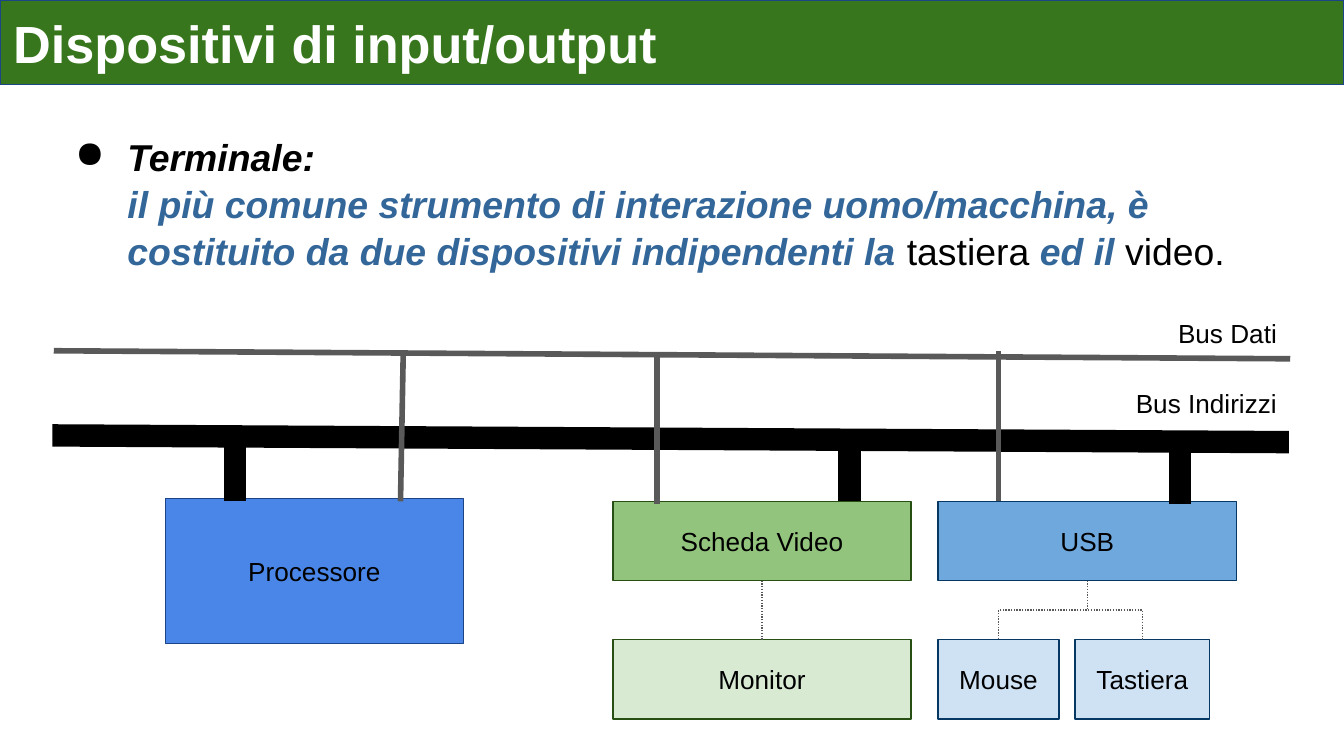
"""Build the slide on input/output devices, on a grid of tenths of an inch."""
from lxml.etree import SubElement
from pptx import Presentation
from pptx.dml.color import RGBColor
from pptx.enum.dml import MSO_LINE as Dash
from pptx.enum.shapes import MSO_CONNECTOR as Connector, MSO_SHAPE as Shape
from pptx.enum.text import MSO_ANCHOR as Anchor, PP_ALIGN as Align
from pptx.oxml.ns import qn
from pptx.util import Inches, Pt

CELL = Inches(0.1)
COLUMNS, ROWS = 100, 56.25
BLACK, GRAY, BLUE = "000000", "595959", "336699"
BOX_WIDTH, BOX_HEIGHT = 22.2, 5.9
CARD_TOP, DEVICE_TOP = 37.3, 47.6
VIDEO_LEFT, USB_LEFT = 45.6, 69.8


def color(value):
    return RGBColor.from_string(value)


def write(shape, *runs, size=14, align=Align.LEFT, anchor=Anchor.MIDDLE, inset=1, spacing=1, bullet=None):
    frame = shape.text_frame
    frame.word_wrap = True
    frame.vertical_anchor = anchor
    frame.margin_left = frame.margin_right = CELL
    frame.margin_top = frame.margin_bottom = int(inset * CELL)
    paragraph = frame.paragraphs[0]
    paragraph.alignment = align
    paragraph.line_spacing = spacing
    if bullet:
        properties = paragraph._p.get_or_add_pPr()
        properties.set("marL", str(5 * CELL))
        properties.set("indent", str(int(-3.9 * CELL)))
        bullet_color = SubElement(properties, qn("a:buClr"))
        SubElement(bullet_color, qn("a:srgbClr"), val=BLACK)
        SubElement(properties, qn("a:buChar"), char=bullet)
    paragraph.font.size = Pt(size)
    for text, tint, bold, italic in runs:
        if text.startswith("\n"):
            paragraph.add_line_break()
        run = paragraph.add_run()
        run.text = text.lstrip("\n")
        run.font.name, run.font.size = "Arial", Pt(size)
        run.font.bold, run.font.italic = bold, italic
        run.font.color.rgb = color(tint)


presentation = Presentation()
presentation.slide_width = COLUMNS * CELL
presentation.slide_height = int(ROWS * CELL)
slide = presentation.slides.add_slide(presentation.slide_layouts[6])
shapes = slide.shapes

definition = shapes.add_textbox(*(int(n * CELL) for n in (3.5, 9.3, 93.2, 13.7)))
write(
    definition,
    ("Terminale:", BLACK, True, True),
    ("\nil più comune strumento di interazione uomo/macchina, è costituito da due dispositivi indipendenti la ",
     BLUE, True, True),
    ("tastiera ", BLACK, False, False),
    ("ed il", BLUE, True, True),
    (" video.", BLACK, False, False),
    size=20, anchor=Anchor.TOP, inset=0.5, spacing=1.05, bullet="●",
)

boxes = {}
for name, left, top, width, height, fill, border in (
    ("Dispositivi di input/output", 0, 0, COLUMNS, 6.3, "38761D", "1C4587"),
    ("Processore", 12.3, 37.1, BOX_WIDTH, 10.8, "4A86E8", "1C4587"),
    ("Scheda Video", VIDEO_LEFT, CARD_TOP, BOX_WIDTH, BOX_HEIGHT, "93C47D", "274E13"),
    ("Monitor", VIDEO_LEFT, DEVICE_TOP, BOX_WIDTH, BOX_HEIGHT, "D9EAD3", "274E13"),
    ("USB", USB_LEFT, CARD_TOP, BOX_WIDTH, BOX_HEIGHT, "6FA8DC", "073763"),
    ("Mouse", USB_LEFT, DEVICE_TOP, 9, BOX_HEIGHT, "CFE2F3", "073763"),
    ("Tastiera", 80, DEVICE_TOP, 10, BOX_HEIGHT, "CFE2F3", "073763"),
):
    box = shapes.add_shape(Shape.RECTANGLE, *(int(n * CELL) for n in (left, top, width, height)))
    box.shadow.inherit = False
    box.fill.solid()
    box.fill.fore_color.rgb = color(fill)
    box.line.color.rgb = color(border)
    box.line.width = Pt(0.75)
    if top == 0:
        write(box, (name, "FFFFFF", True, False), size=28, inset=0.5)
    else:
        write(box, (name, BLACK, False, False), align=Align.CENTER)
    boxes[name] = box

for label, left, top in (("Bus Dati", 81.9, 22.6), ("Bus Indirizzi", 80.8, 27.8)):
    box = shapes.add_textbox(*(int(n * CELL) for n in (left, top, 96 - left, 4.4)))
    write(box, (label, BLACK, False, False), align=Align.RIGHT)

lines = []
for tint, width, ends in (
    (BLACK, 12, (3.9, 32.4, 95.9, 32.9)),
    (GRAY, 3, (4, 26.1, 96, 26.7)),
    (BLACK, 12, (17.5, 37.3, 17.5, 32)),
    (GRAY, 3, (29.8, 37.3, 30, 26.4)),
    (BLACK, 12, (63.2, 32.9, 63.2, 37.3)),
    (GRAY, 3, (74.3, 26.1, 74.3, 37.3)),
    (GRAY, 3, (48.9, 26.3, 48.9, 37.5)),
    (BLACK, 12, (87.8, 33.1, 87.8, 37.5)),
):
    line = shapes.add_connector(Connector.STRAIGHT, *(int(n * CELL) for n in ends))
    lines.append((line, tint, width))

video_link = shapes.add_connector(Connector.STRAIGHT, 0, 0, 0, 0)
video_link.begin_connect(boxes["Scheda Video"], 2)
video_link.end_connect(boxes["Monitor"], 0)
links = [video_link]

usb = boxes["USB"]
start_x, start_y = usb.left + usb.width // 2, usb.top + usb.height
for name, side, angle in (("Mouse", -1, 90), ("Tastiera", 1, 270)):
    device = boxes[name]
    end_x = device.left + device.width // 2
    middle_x, middle_y = (start_x + end_x) // 2, (start_y + device.top) // 2
    half_drop, half_span = (device.top - start_y) // 2, abs(end_x - start_x) // 2
    link = shapes.add_connector(
        Connector.ELBOW,
        middle_x + side * half_drop, middle_y - half_span,
        middle_x - side * half_drop, middle_y + half_span,
    )
    link._element.spPr.find(qn("a:xfrm")).set("rot", str(angle * 60000))
    links.append(link)

for link in links:
    link.line.dash_style = Dash.ROUND_DOT
    lines.append((link, GRAY, 0.75))

for line, tint, width in lines:
    line.line.color.rgb = color(tint)
    line.line.width = Pt(width)
    SubElement(line._element.spPr, qn("a:effectLst"))

presentation.save("out.pptx")
